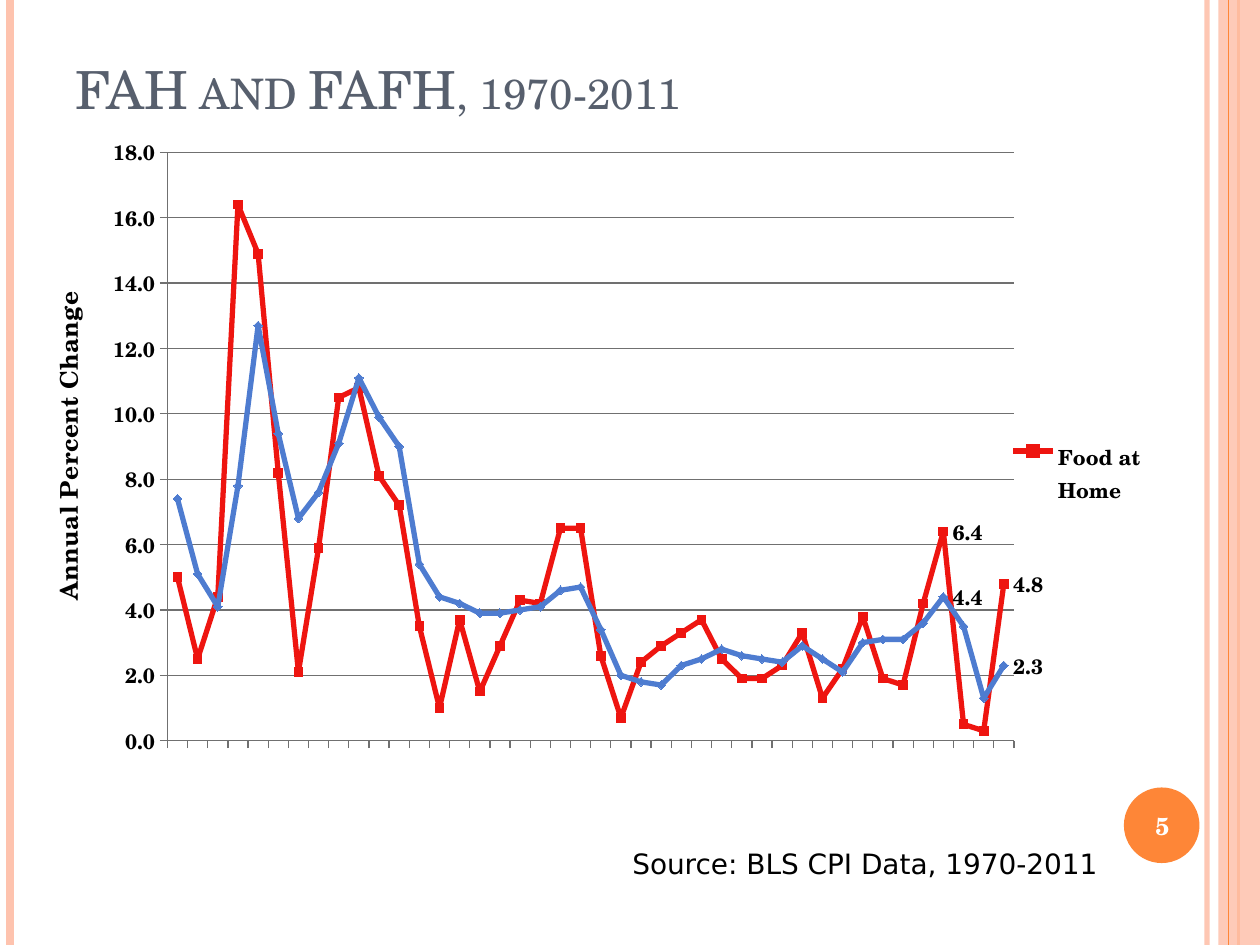
from dataclasses import dataclass

from lxml import etree
from pptx import Presentation
from pptx import util as u
from pptx.chart.data import CategoryChartData
from pptx.dml.color import RGBColor
from pptx.enum import chart as charts, shapes, text
from pptx.oxml import parse_xml
from pptx.oxml.ns import nsdecls, qn

SERIF = "TeX Gyre Schola"
ORANGE, PEACH, BLACK, GRAY = "FE8637", "FEC3AE", "000000", "707070"
YEARS = range(1970, 2012)
LABELLED_YEARS = (2008, 2011)


@dataclass
class Stripe:
    x: float
    color: str
    weight: float
    alpha: int = 100


@dataclass
class FoodSeries:
    name: str
    color: str
    marker_color: str
    marker: charts.XL_MARKER_STYLE
    values: tuple


LEFT_STRIPES = (Stripe(9.58, PEACH, 3, 93), Stripe(0.08, PEACH, 4.5), Stripe(9.83, ORANGE, 1.5))
BAND_STRIPE = Stripe(9.75, ORANGE, 0.75)

FOOD = (
    FoodSeries("Food at Home", "EE1510", "EE1510", charts.XL_MARKER_STYLE.SQUARE, (
        5, 2.5, 4.4, 16.4, 14.9, 8.2, 2.1, 5.9, 10.5, 10.8, 8.1, 7.2, 3.5, 1,
        3.7, 1.5, 2.9, 4.3, 4.2, 6.5, 6.5, 2.6, 0.7, 2.4, 2.9, 3.3, 3.7, 2.5,
        1.9, 1.9, 2.3, 3.3, 1.3, 2.2, 3.8, 1.9, 1.7, 4.2, 6.4, 0.5, 0.3, 4.8)),
    FoodSeries("Food away from Home", "4E7CD0", "4E7CD0", charts.XL_MARKER_STYLE.DIAMOND, (
        7.4, 5.1, 4.1, 7.8, 12.7, 9.4, 6.8, 7.6, 9.1, 11.1, 9.9, 9, 5.4, 4.4,
        4.2, 3.9, 3.9, 4, 4.1, 4.6, 4.7, 3.4, 2, 1.8, 1.7, 2.3, 2.5, 2.8,
        2.6, 2.5, 2.4, 2.9, 2.5, 2.1, 3, 3.1, 3.1, 3.6, 4.4, 3.5, 1.3, 2.3)),
)


def inches(*lengths: float) -> list:
    return [u.Inches(length) for length in lengths]


def paint(fill, color: str, alpha: int = 100) -> None:
    fill.solid()
    fill.fore_color.rgb = RGBColor.from_string(color)
    if alpha < 100:
        choice = fill._xPr.find(qn("a:solidFill"))[0]
        etree.SubElement(choice, qn("a:alpha"), val=str(alpha * 1000))


def set_font(font, size: float, color: str, name: str = SERIF, bold: bool = False) -> None:
    font.size, font.name, font.bold = u.Pt(size), name, bold
    paint(font.fill, color)


def write(frame, content: str, *, size: float, color: str, name: str = SERIF,
          bold: bool = False, small_caps: bool = False,
          align=text.PP_ALIGN.LEFT, anchor=text.MSO_ANCHOR.TOP) -> None:
    frame.word_wrap = True
    frame.vertical_anchor = anchor
    para = frame.paragraphs[0]
    para.alignment = align
    span = para.add_run()
    span.text = content
    set_font(span.font, size, color, name, bold)
    if small_caps:
        span.font._element.set("cap", "small")


def add_stripe(page, stripe: Stripe) -> None:
    line = page.shapes.add_connector(
        shapes.MSO_CONNECTOR.STRAIGHT, *inches(stripe.x, 0, stripe.x, 7.5))
    line.line.width = u.Pt(stripe.weight)
    paint(line.line.fill, stripe.color, stripe.alpha)
    etree.SubElement(line._element.spPr, qn("a:effectLst"))


def add_filled(page, kind, at: tuple, color: str, alpha: int = 100):
    shape = page.shapes.add_shape(kind, *inches(*at))
    shape.shadow.inherit = False
    paint(shape.fill, color, alpha)
    shape.line.fill.background()
    return shape


def layout_xml(x: float, y: float, w: float, h: float, inner: bool = False):
    """Manual chart layout in fractions of the chart area."""
    target = '<c:layoutTarget val="inner"/>' if inner else ""
    modes = '<c:xMode val="edge"/><c:yMode val="edge"/>'
    sizes = "".join(f'<c:{tag} val="{value}"/>'
                    for tag, value in zip("xywh", (x, y, w, h)))
    return parse_xml(f'<c:layout {nsdecls("c")}><c:manualLayout>{target}{modes}{sizes}'
                     "</c:manualLayout></c:layout>")


def format_axes(chart) -> None:
    years, change = chart.category_axis, chart.value_axis
    years.tick_label_position = charts.XL_TICK_LABEL_POSITION.NONE
    years.has_major_gridlines = False
    change.minimum_scale, change.maximum_scale, change.major_unit = 0, 18, 2
    change.tick_labels.number_format = "#0.0"
    change.tick_labels.number_format_is_linked = False
    change.has_major_gridlines = True
    for axis in (years, change):
        axis.major_tick_mark = charts.XL_TICK_MARK.OUTSIDE
        axis.minor_tick_mark = charts.XL_TICK_MARK.NONE
    for line in (years.format.line, change.format.line, change.major_gridlines.format.line):
        line.width = u.Pt(0.75)
        paint(line.fill, GRAY)
    write(change.axis_title.text_frame, "Annual Percent Change",
          size=14, color=BLACK, bold=True, align=text.PP_ALIGN.CENTER)


def format_series(series, food: FoodSeries) -> None:
    series.smooth = False
    series.format.line.width = u.Pt(3)
    paint(series.format.line.fill, food.color)
    series.marker.style, series.marker.size = food.marker, 5
    paint(series.marker.format.fill, food.marker_color)
    paint(series.marker.format.line.fill, food.marker_color)
    for year in LABELLED_YEARS:
        label = series.points[YEARS.index(year)].data_label
        label.position = charts.XL_LABEL_POSITION.RIGHT
    series.data_labels.show_value = False


def format_legend(chart) -> None:
    """Show the first series only, at the right of the plot."""
    chart.has_legend = True
    legend = chart.legend
    legend.position = charts.XL_LEGEND_POSITION.RIGHT
    legend.include_in_layout = False
    element = legend._element
    for old in element.findall(qn("c:layout")):
        element.remove(old)
    entry = parse_xml(f'<c:legendEntry {nsdecls("c")}><c:idx val="1"/>'
                      '<c:delete val="1"/></c:legendEntry>')
    position = element.find(qn("c:legendPos"))
    position.addnext(entry)
    entry.addnext(layout_xml(0.84, 0.44, 0.13, 0.12))


def add_food_chart(page) -> None:
    data = CategoryChartData()
    data.categories = [str(year) for year in YEARS]
    for food in FOOD:
        data.add_series(food.name, food.values)
    chart = page.shapes.add_chart(
        charts.XL_CHART_TYPE.LINE_MARKERS, *inches(0.33, 1.08, 9.08, 5.33), data).chart
    chart.has_title = False
    set_font(chart.font, 12, BLACK, bold=True)
    chart.plots[0].vary_by_categories = False
    format_axes(chart)
    for series, food in zip(chart.plots[0].series, FOOD):
        format_series(series, food)
    format_legend(chart)
    plot_area = chart._chartSpace.chart.plotArea
    for old in plot_area.findall(qn("c:layout")):
        plot_area.remove(old)
    plot_area.insert(0, layout_xml(0.11, 0.02, 0.74, 0.88, inner=True))


def main() -> None:
    deck = Presentation()
    deck.slide_width, deck.slide_height = inches(10, 7.5)
    page = deck.slides.add_slide(deck.slide_layouts[5])
    for stripe in LEFT_STRIPES:
        add_stripe(page, stripe)
    add_filled(page, shapes.MSO_SHAPE.RECTANGLE, (9.67, 0, 0.33, 7.5), PEACH, 87)
    add_stripe(page, BAND_STRIPE)

    title = page.shapes.title
    title.left, title.top, title.width, title.height = inches(0.5, 0.3, 8.17, 0.7)
    write(title.text_frame, "FAH and FAFH, 1970-2011", size=30, color="575F6D",
          small_caps=True, anchor=text.MSO_ANCHOR.BOTTOM)
    add_food_chart(page)

    add_filled(page, shapes.MSO_SHAPE.OVAL, (8.92, 6.25, 0.6, 0.6), ORANGE)
    number = page.shapes.add_textbox(*inches(8.89, 6.27, 0.67, 0.57))
    write(number.text_frame, "5", size=14, color="FFFFFF", bold=True,
          align=text.PP_ALIGN.CENTER, anchor=text.MSO_ANCHOR.MIDDLE)
    source = page.shapes.add_textbox(*inches(4.92, 6.67, 4.25, 0.37))
    write(source.text_frame, "Source: BLS CPI Data, 1970-2011",
          size=16, color=BLACK, name="DejaVu Sans")
    deck.save("out.pptx")


if __name__ == "__main__":
    main()
